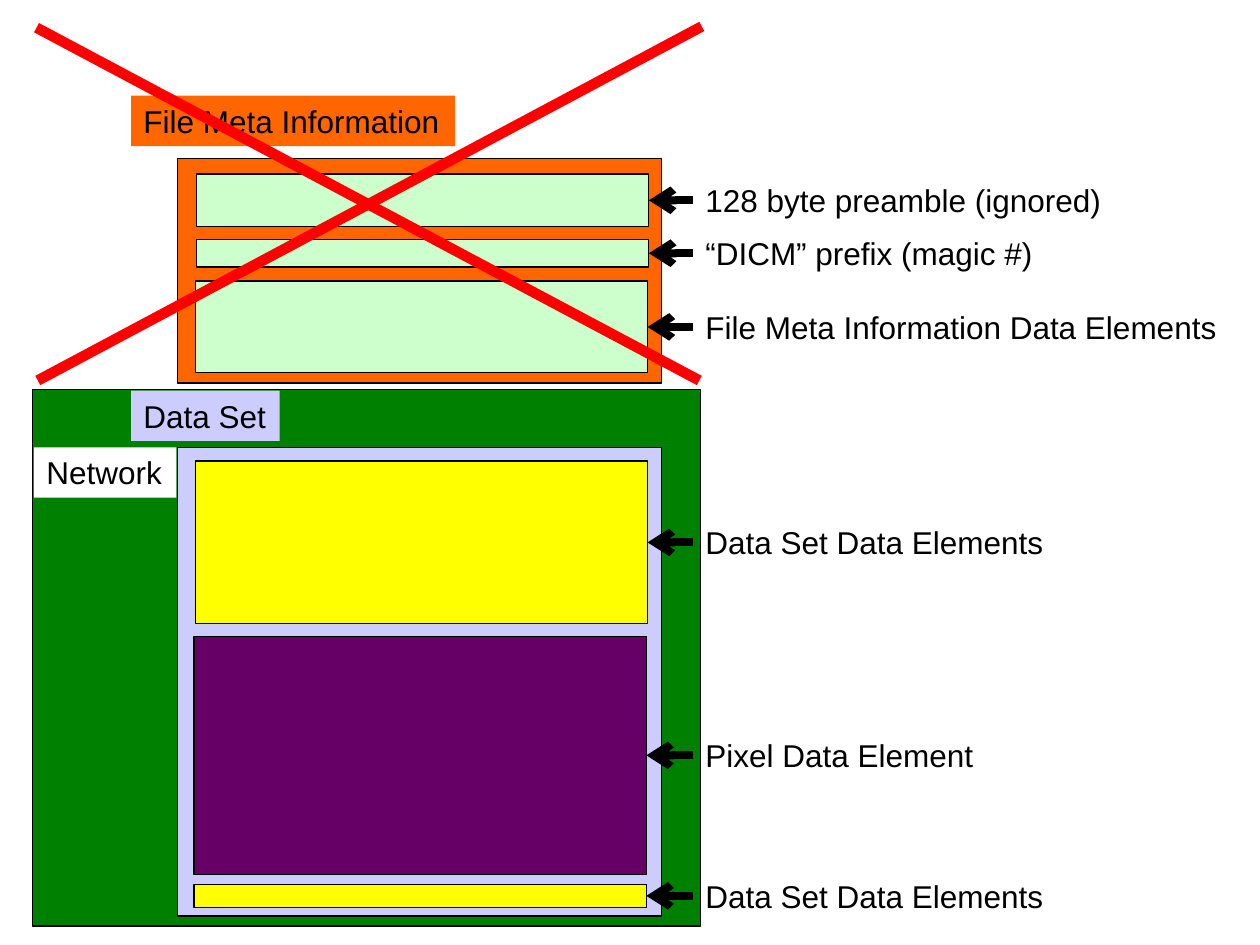
from lxml import etree
from pptx import Presentation
from pptx.dml.color import RGBColor
from pptx.enum.shapes import MSO_CONNECTOR, MSO_SHAPE
from pptx.enum.text import MSO_AUTO_SIZE
from pptx.oxml.ns import qn
from pptx.util import Inches, Pt

RECTANGLE = MSO_SHAPE.RECTANGLE
STRAIGHT = MSO_CONNECTOR.STRAIGHT
FIT_SHAPE = MSO_AUTO_SIZE.SHAPE_TO_FIT_TEXT

SLIDE_WIDTH, SLIDE_HEIGHT = 10, 7.5
BLANK_LAYOUT = 6
LEFT_SIDE, RIGHT_SIDE = 1, 3
FIELD_WIDTH = 3.59
LABEL_LEFT, LABEL_HEIGHT = 5.5, 0.4

COLORS = {
    "black": "000000",
    "white": "FFFFFF",
    "network": "008000",
    "meta": "FF6600",
    "data set": "CCCCFF",
    "meta field": "CCFFCC",
    "elements": "FFFF00",
    "pixels": "660066",
    "cross": "FF0000",
}

# left, top, width, height, color
FRAMES = [
    (0.26, 3.09, 5.3, 4.26, "network"),
    (1.41, 1.26, 3.84, 1.78, "meta"),
    (1.41, 3.55, 3.84, 3.72, "data set"),
]

# left, top, height, color, label, label width
FIELDS = [
    (1.56, 1.38, 0.42, "meta field", "128 byte preamble (ignored)", 3.37),
    (1.56, 1.9, 0.22, "meta field", "“DICM” prefix (magic #)", 2.82),
    (1.55, 2.23, 0.73, "meta field", "File Meta Information Data Elements", 4.3),
    (1.55, 3.66, 1.29, "elements", "Data Set Data Elements", 2.91),
    (1.54, 5.05, 1.89, "pixels", "Pixel Data Element", 2.35),
    (1.54, 7.02, 0.18, "elements", "Data Set Data Elements", 2.91),
]

# text, left, top, width, color
TAGS = [
    ("File Meta Information", 1.04, 0.76, 2.57, "meta"),
    ("Data Set", 1.04, 3.1, 1.18, "data set"),
    ("Network", 0.27, 3.55, 1.13, "white"),
]

CROSS = [(0.29, 0.22, 5.55, 3.02), (5.57, 0.21, 0.3, 3.02)]


def rgb(name):
    return RGBColor.from_string(COLORS[name])


def add_box(slide, left, top, width, height, color):
    box = slide.shapes.add_shape(
        RECTANGLE, Inches(left), Inches(top), Inches(width), Inches(height))
    box.shadow.inherit = False
    box.fill.solid()
    box.fill.fore_color.rgb = rgb(color)
    box.line.color.rgb = rgb("black")
    box.line.width = Pt(0.75)
    return box


def add_label(slide, text, left, top, width, color=None):
    """Add one unwrapped line of text, filled if a color is given."""
    label = slide.shapes.add_textbox(
        Inches(left), Inches(top), Inches(width), Inches(LABEL_HEIGHT))
    if color:
        label.fill.solid()
        label.fill.fore_color.rgb = rgb(color)
    frame = label.text_frame
    frame.word_wrap = False
    frame.auto_size = FIT_SHAPE
    para = frame.paragraphs[0]
    para.text = text
    para.font.name = "Arial"
    para.font.size = Pt(18)
    para.font.color.rgb = rgb("black")
    return label


def add_line(slide, ends, color, width):
    line = slide.shapes.add_connector(STRAIGHT, *map(Inches, ends))
    line.line.color.rgb = rgb(color)
    line.line.width = Pt(width)
    etree.SubElement(line.element.spPr, qn("a:effectLst"))
    return line


def add_arrow(slide, label, field):
    arrow = add_line(slide, (0, 0, 0, 0), "black", 4.5)
    arrow.begin_connect(label, LEFT_SIDE)
    arrow.end_connect(field, RIGHT_SIDE)
    etree.SubElement(arrow.line._get_or_add_ln(), qn("a:tailEnd"), type="arrow")


def main():
    deck = Presentation()
    deck.slide_width = Inches(SLIDE_WIDTH)
    deck.slide_height = Inches(SLIDE_HEIGHT)
    slide = deck.slides.add_slide(deck.slide_layouts[BLANK_LAYOUT])

    for frame in FRAMES:
        add_box(slide, *frame)
    for left, top, height, color, text, label_width in FIELDS:
        field = add_box(slide, left, top, FIELD_WIDTH, height, color)
        label_top = top + (height - LABEL_HEIGHT) / 2
        label = add_label(slide, text, LABEL_LEFT, label_top, label_width)
        add_arrow(slide, label, field)
    for tag in TAGS:
        add_label(slide, *tag)
    for ends in CROSS:
        add_line(slide, ends, "cross", 6)

    deck.save("out.pptx")


if __name__ == "__main__":
    main()
